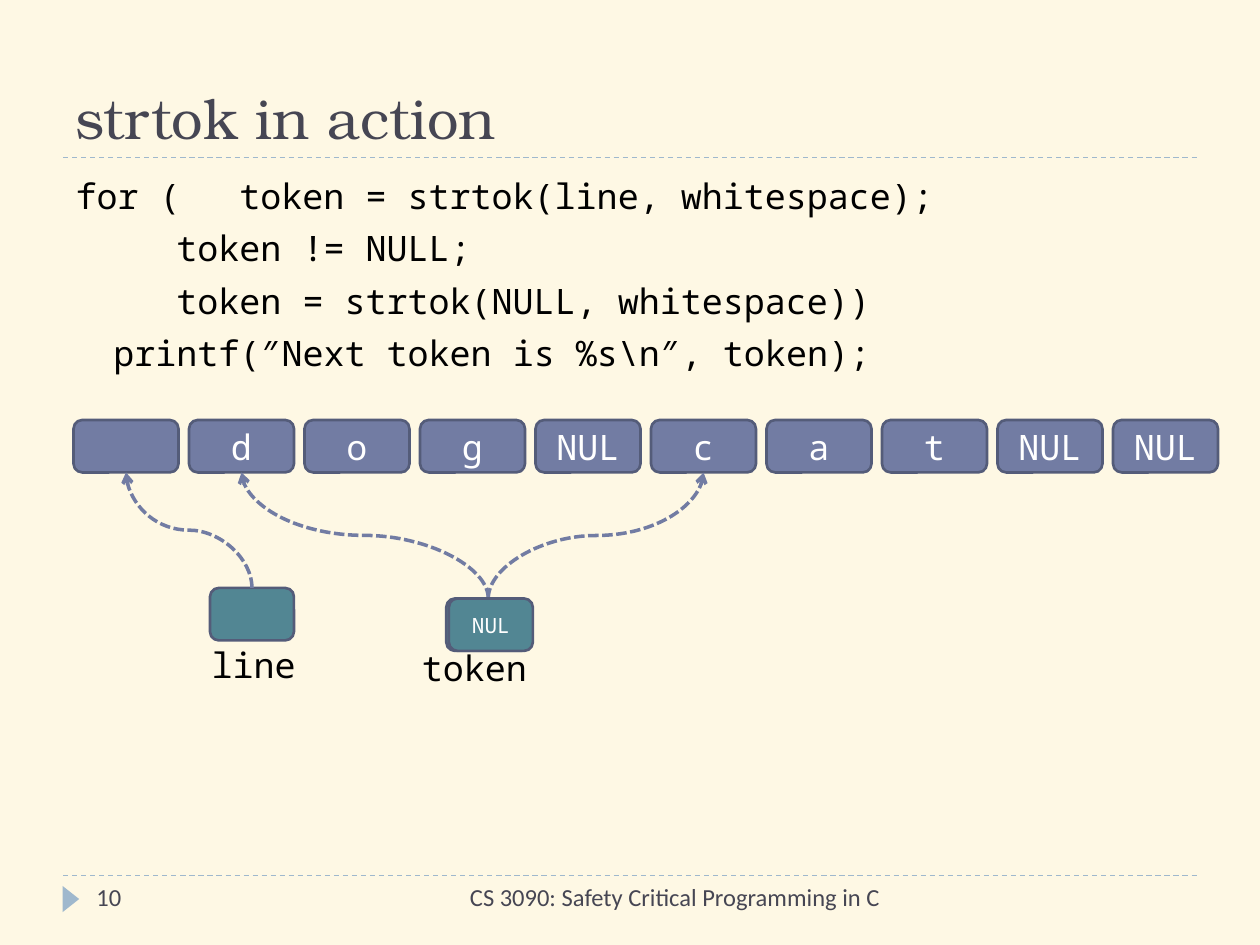
import pptx
import pptx.dml.color
import pptx.enum.dml
import pptx.enum.shapes
import pptx.enum.text
import pptx.oxml.ns
import pptx.util
from lxml import etree

Pt = pptx.util.Pt
ALIGN = pptx.enum.text.PP_ALIGN
ANCHOR = pptx.enum.text.MSO_ANCHOR
SHAPE = pptx.enum.shapes.MSO_SHAPE
CONNECTOR = pptx.enum.shapes.MSO_CONNECTOR
DASH = pptx.enum.dml.MSO_LINE

MONO, SERIF, SANS = "Noto Sans Mono", "TeX Gyre Bonum", "Calibri"
CREAM, INK, BLACK, WHITE = "FEF8E4", "464653", "000000", "FFFFFF"
VIOLET, TEAL, EDGE, SKY = "727CA3", "528693", "545C79", "9FB8CD"


def color(hex_string):
    return pptx.dml.color.RGBColor.from_string(hex_string)


def add_child(parent, tag, **attributes):
    return etree.SubElement(parent, pptx.oxml.ns.qn(tag), attributes)


def write(frame, text, font=MONO, size=20, fill=BLACK, align=ALIGN.LEFT,
          anchor=ANCHOR.TOP, wrap=True, before=0, hanging=0):
    """Fill a text frame, one paragraph for each line of text."""
    frame.word_wrap = wrap
    frame.vertical_anchor = anchor
    for number, line in enumerate(text.split("\n")):
        paragraph = frame.paragraphs[0] if number == 0 else frame.add_paragraph()
        paragraph.alignment = align
        paragraph.space_before = Pt(before)
        paragraph.line_spacing = 1.0
        properties = paragraph._p.get_or_add_pPr()
        properties.set("marL", str(Pt(hanging)))
        properties.set("indent", str(-Pt(hanging)))
        add_child(properties, "a:buNone")
        run = paragraph.add_run()
        run.text = line
        run.font.name, run.font.size = font, Pt(size)
        run.font.color.rgb = color(fill)


class SlideBuilder:
    """Holds the current slide and draws its elements in one style."""

    def __init__(self, presentation):
        self.slide = presentation.slides.add_slide(presentation.slide_layouts[1])
        self.slide.background.fill.solid()
        self.slide.background.fill.fore_color.rgb = color(CREAM)

    def placeholder(self, index, box, text, **style):
        shape = self.slide.placeholders[index]
        shape.left, shape.top, shape.width, shape.height = map(Pt, box)
        shape.text_frame.auto_size = pptx.enum.text.MSO_AUTO_SIZE.NONE
        write(shape.text_frame, text, **style)

    def label(self, box, text, **style):
        shape = self.slide.shapes.add_textbox(*map(Pt, box))
        write(shape.text_frame, text, **style)

    def shape(self, kind, box, fill, edge=None):
        shape = self.slide.shapes.add_shape(kind, *map(Pt, box))
        shape.shadow.inherit = False
        shape.fill.solid()
        shape.fill.fore_color.rgb = color(fill)
        if edge:
            shape.line.color.rgb, shape.line.width = color(edge), Pt(1.5)
        else:
            shape.line.fill.background()
        return shape

    def cell(self, box, fill, text="", size=20):
        shape = self.shape(SHAPE.ROUNDED_RECTANGLE, box, fill, EDGE)
        if text:
            write(shape.text_frame, text, size=size, fill=WHITE,
                  align=ALIGN.CENTER, anchor=ANCHOR.MIDDLE, wrap=False)

    def connector(self, kind, points, line, width, dash):
        connector = self.slide.shapes.add_connector(kind, *map(Pt, points))
        connector.line.color.rgb, connector.line.width = color(line), Pt(width)
        connector.line.dash_style = dash
        add_child(connector._element.spPr, "a:effectLst")
        return connector

    def rule(self, top):
        self.connector(CONNECTOR.STRAIGHT, (36, top, 684, top), SKY, 0.75, DASH.DASH)

    def pointer(self, start, end):
        """Curve that leaves start and reaches end vertically, going up."""
        across, rise = end[0] - start[0], start[1] - end[1]
        middle_x, middle_y = (start[0] + end[0]) / 2, (start[1] + end[1]) / 2
        # Drawn lying down, then turned by 270 degrees about its middle
        points = (middle_x - rise / 2, middle_y - across / 2,
                  middle_x + rise / 2, middle_y + across / 2)
        connector = self.connector(CONNECTOR.CURVE, points, VIOLET, 2, DASH.SQUARE_DOT)
        connector._element.spPr.find(pptx.oxml.ns.qn("a:xfrm")).set("rot", str(270 * 60000))
        add_child(connector.line._get_or_add_ln(), "a:tailEnd", type="arrow")


def main():
    presentation = pptx.Presentation()
    presentation.slide_width, presentation.slide_height = Pt(720), Pt(540)
    builder = SlideBuilder(presentation)

    # Rules and footer
    builder.rule(500.4)
    builder.rule(90)
    marker = builder.shape(SHAPE.ISOSCELES_TRIANGLE, (33, 509, 15, 9.5), SKY)
    marker.rotation = 90
    footer = dict(font=SANS, size=14, fill=INK)
    builder.label((228, 500.4, 282, 28.8), "CS 3090: Safety Critical Programming in C",
                  align=ALIGN.RIGHT, **footer)
    builder.label((48, 500.4, 156, 28.8), "10", **footer)

    # Title and code
    builder.placeholder(0, (36, 12, 648, 78), "strtok in action",
                        font=SERIF, size=32, fill=INK, anchor=ANCHOR.BOTTOM)
    code = ("for (\ttoken = strtok(line, whitespace);\n"
            "\t\ttoken != NULL;\n"
            "\t\ttoken = strtok(NULL, whitespace))\n"
            "\tprintf(″Next token is %s\\n″, token);")
    builder.placeholder(1, (36, 96, 648, 388.8), code, before=6, hanging=21.6)

    # Character array
    cell_left, cell_top, cell_width, cell_height, pitch = 42, 240, 60, 30, 66
    characters = ["", "d", "o", "g", "NUL", "c", "a", "t", "NUL", "NUL"]
    for index, character in enumerate(characters):
        builder.cell((cell_left + index * pitch, cell_top, cell_width, cell_height),
                     VIOLET, character)

    # Pointer variables
    builder.cell((120, 336, 48, 30), TEAL)
    builder.label((113.8, 364.3, 63.4, 31.7), "line", wrap=False)
    builder.cell((255, 342, 48, 30), TEAL)
    builder.label((234, 365.8, 74.9, 31.7), "token", wrap=False)

    # Arrows from each variable to the cell it points at
    line_start, token_start = (144, 336), (279, 342)
    for start, index in ((token_start, 1), (token_start, 5), (line_start, 0)):
        target = cell_left + index * pitch + cell_width / 2
        builder.pointer(start, (target, cell_top + cell_height))

    # Final value of token
    builder.cell((256.5, 342, 48, 30), TEAL, "NUL", size=12)

    presentation.save("out.pptx")


if __name__ == "__main__":
    main()
